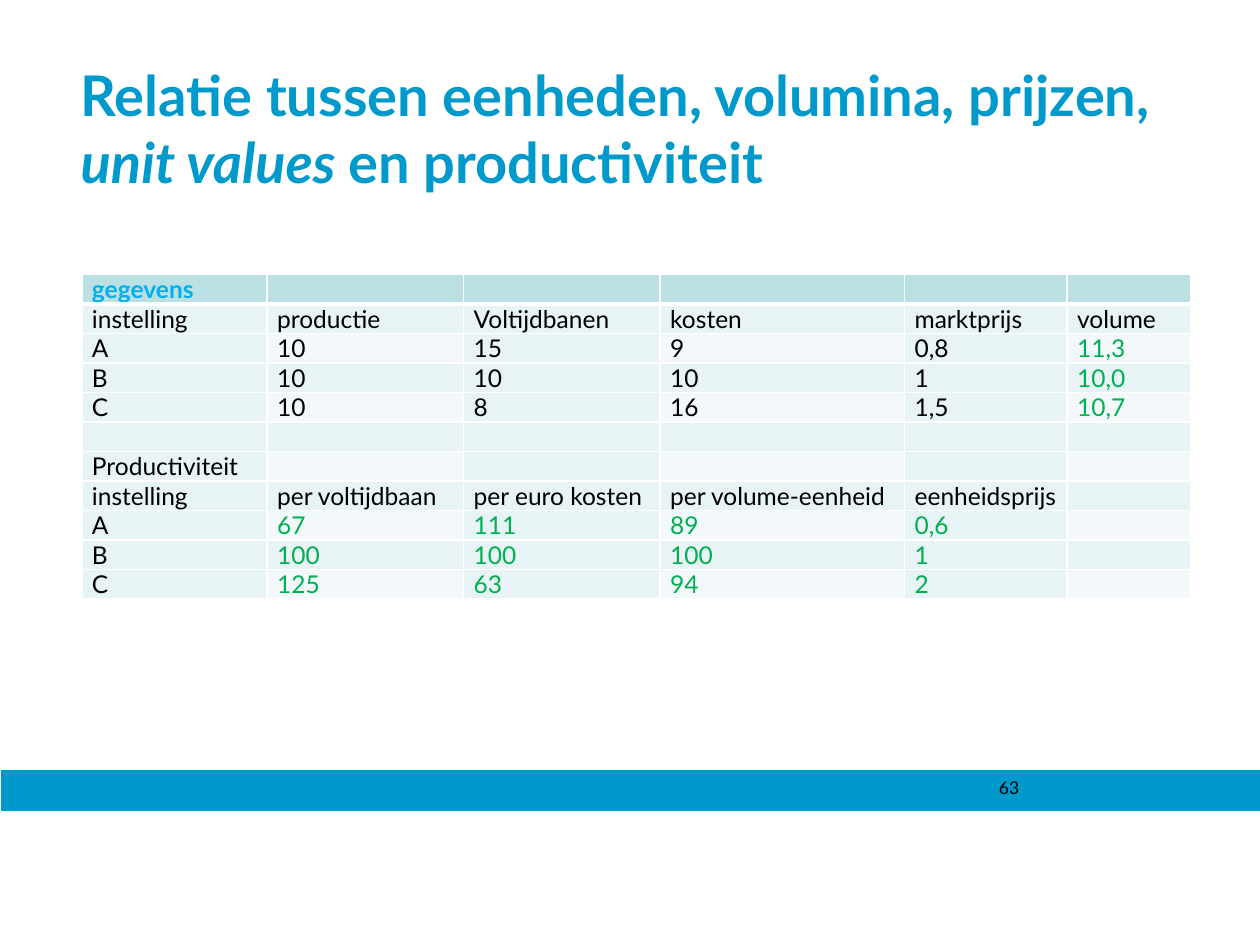
"""Build the slide on units, volumes, prices, unit values and productivity."""
from dataclasses import dataclass

import pptx
import pptx.dml.color
import pptx.enum.shapes
import pptx.enum.text
import pptx.oxml
import pptx.oxml.ns
import pptx.util
from pptx.dml.color import RGBColor
from pptx.util import Inches

BLUE = RGBColor(0x00, 0x99, 0xCC)
SKY = RGBColor(0x00, 0xB0, 0xF0)
GREEN = RGBColor(0x00, 0xB0, 0x50)
BLACK = RGBColor(0x00, 0x00, 0x00)
WHITE = RGBColor(0xFF, 0xFF, 0xFF)
HEAD = RGBColor(0xBB, 0xE0, 0xE3)
TINT = RGBColor(0xE7, 0xF3, 0xF4)
PALE = RGBColor(0xF3, 0xF9, 0xFA)

WIDTHS = (1.47, 1.56, 1.56, 1.94, 1.29, 0.98)
ROWS = (
    ("gegevens", "", "", "", "", ""),
    ("instelling", "productie", "Voltijdbanen", "kosten", "marktprijs", "volume"),
    ("A", "10", "15", "9", "0,8", "11,3"),
    ("B", "10", "10", "10", "1", "10,0"),
    ("C", "10", "8", "16", "1,5", "10,7"),
    ("", "", "", "", "", ""),
    ("Productiviteit", "", "", "", "", ""),
    ("instelling", "per voltijdbaan", "per euro kosten", "per volume-eenheid",
     "eenheidsprijs", ""),
    ("A", "67", "111", "89", "0,6", ""),
    ("B", "100", "100", "100", "1", ""),
    ("C", "125", "63", "94", "2", ""),
)


@dataclass
class Bar:
    left: float
    top: float
    width: float
    height: float
    fill: RGBColor


BARS = (
    Bar(0, 6.44, 10.01, 1.06, WHITE),
    Bar(0.01, 6.12, 10, 0.31, BLUE),
)


def style(run, size: float, color: RGBColor, bold: bool = False) -> None:
    """Format one run."""
    run.font.name = "Lato"
    run.font.size = pptx.util.Pt(size)
    run.font.bold = bold
    run.font.color.rgb = color


def add_bar(slide, bar: Bar) -> None:
    """Draw one plain footer bar."""
    shape = slide.shapes.add_shape(
        pptx.enum.shapes.MSO_SHAPE.RECTANGLE, Inches(bar.left), Inches(bar.top),
        Inches(bar.width), Inches(bar.height))
    shape.shadow.inherit = False
    shape.fill.solid()
    shape.fill.fore_color.rgb = bar.fill
    shape.line.color.rgb = bar.fill
    shape.line.width = pptx.util.Pt(0.75)


def add_title(slide) -> None:
    """Place the title and format its runs."""
    title = slide.shapes.title
    title.left, title.top = Inches(0.54), Inches(0.43)
    title.width, title.height = Inches(8.94), Inches(0.91)
    frame = title.text_frame
    frame.word_wrap = True
    frame.auto_size = pptx.enum.text.MSO_AUTO_SIZE.NONE
    frame.vertical_anchor = pptx.enum.text.MSO_ANCHOR.TOP
    line = frame.paragraphs[0]
    line.alignment = pptx.enum.text.PP_ALIGN.LEFT
    for text, slant in (("Relatie tussen eenheden, volumina, prijzen, ", False),
                        ("unit values ", True), ("en productiviteit", False)):
        run = line.add_run()
        run.text = text
        style(run, 32, BLUE, True)
        run.font.italic = slant


def add_edges(cell, row: int) -> None:
    """Give a cell white borders, thick below the head row."""
    props = cell._tc.get_or_add_tcPr()
    for side in "LRTB":
        thick = (row, side) in ((0, "B"), (1, "T"))
        props.append(pptx.oxml.parse_xml(
            f'<a:ln{side} {pptx.oxml.ns.nsdecls("a")} w="{38100 if thick else 12700}">'
            f'<a:solidFill><a:srgbClr val="{WHITE}"/></a:solidFill></a:ln{side}>'))


def fill_cell(cell, row: int, col: int, text: str) -> None:
    """Set the text, fill and borders of one cell."""
    cell.margin_left = cell.margin_right = Inches(0.08)
    cell.margin_top = cell.margin_bottom = 0
    add_edges(cell, row)
    cell.fill.solid()
    light = row % 2 == 0 and col % 2 == 1
    cell.fill.fore_color.rgb = HEAD if row == 0 else PALE if light else TINT
    cell.text_frame.text = text
    line = cell.text_frame.paragraphs[0]
    if text:
        green = (col == 5 and row > 1) or (col > 0 and row > 7)
        color = SKY if row == 0 else GREEN if green else BLACK
        style(line.runs[0], 14, color, row == 0)
    else:
        line._p.append(pptx.oxml.parse_xml(
            f'<a:endParaRPr {pptx.oxml.ns.nsdecls("a")} sz="1400">'
            '<a:latin typeface="Lato"/></a:endParaRPr>'))


def add_grid(slide) -> None:
    """Draw the table of data and productivity."""
    grid = slide.shapes.add_table(
        len(ROWS), len(WIDTHS), Inches(0.65), Inches(2.18),
        Inches(sum(WIDTHS)), Inches(2.57)).table
    for col, width in zip(grid.columns, WIDTHS):
        col.width = Inches(width)
    for row, texts in enumerate(ROWS):
        for col, text in enumerate(texts):
            fill_cell(grid.cell(row, col), row, col, text)


def add_page(slide) -> None:
    """Write the page number."""
    box = slide.shapes.add_textbox(
        Inches(7.83), Inches(6.12), Inches(2.08), Inches(0.25))
    box.text_frame.word_wrap = True
    box.text_frame.text = "63"
    style(box.text_frame.paragraphs[0].runs[0], 10, BLACK)


def main() -> None:
    """Build and save the slide."""
    deck = pptx.Presentation()
    deck.slide_width, deck.slide_height = Inches(10), Inches(7.5)
    slide = deck.slides.add_slide(deck.slide_layouts[5])
    for bar in BARS:
        add_bar(slide, bar)
    add_title(slide)
    add_page(slide)
    add_grid(slide)
    deck.save("out.pptx")


if __name__ == "__main__":
    main()
